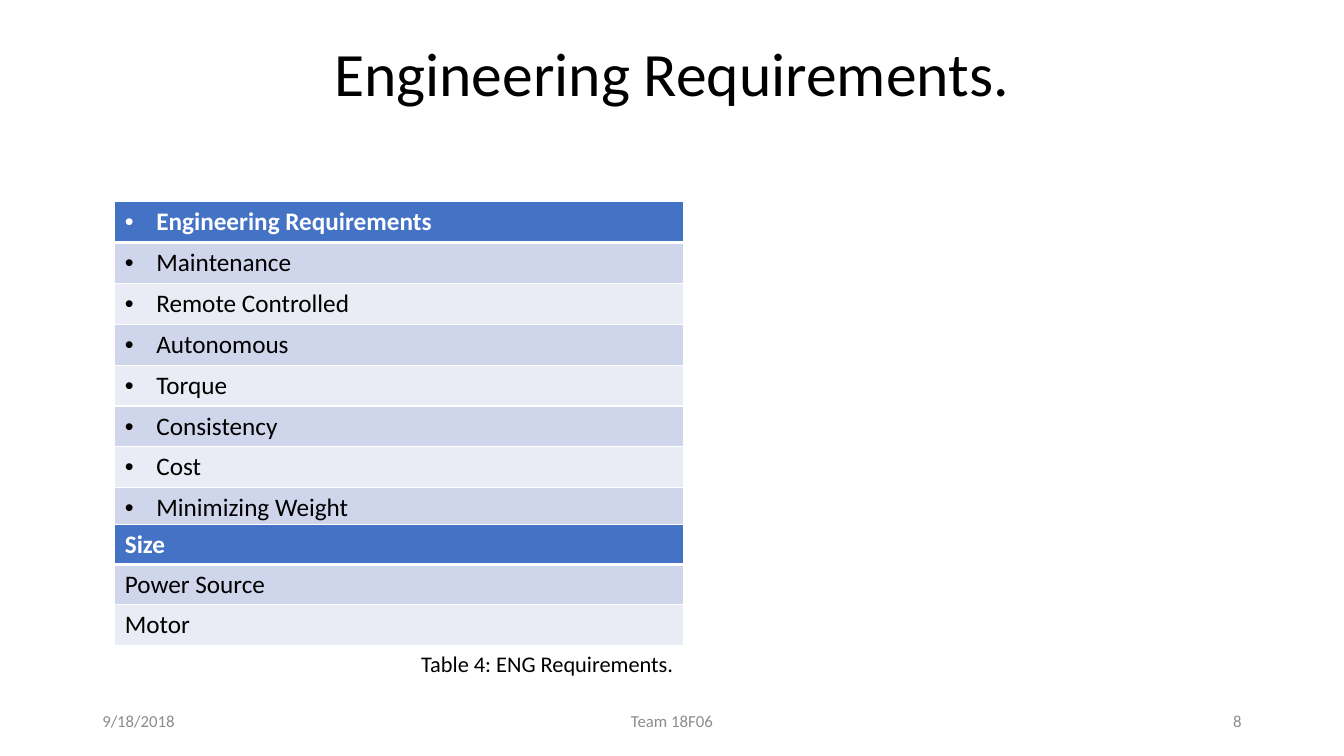
from lxml import etree
from pptx import Presentation
from pptx.dml.color import RGBColor
from pptx.enum.text import MSO_ANCHOR, MSO_AUTO_SIZE, PP_ALIGN
from pptx.oxml.ns import qn
from pptx.util import Pt

LEFT, CENTER, RIGHT = PP_ALIGN.LEFT, PP_ALIGN.CENTER, PP_ALIGN.RIGHT
TOP, MIDDLE = MSO_ANCHOR.TOP, MSO_ANCHOR.MIDDLE
FIXED = MSO_AUTO_SIZE.NONE
FONT = "Calibri"
COLORS = {
    "text": "000000",
    "white": "FFFFFF",
    "header": "4472C4",
    "band": "CFD5EA",
    "light": "E9EBF5",
    "footer": "8C8C8C",
}
REQUIREMENTS = [
    "Engineering Requirements", "Maintenance", "Remote Controlled", "Autonomous",
    "Torque", "Consistency", "Cost", "Minimizing Weight",
]
MORE_REQUIREMENTS = ["Size", "Power Source", "Motor"]


class RequirementsSlide:
    """Adds styled titles, text and single-column tables to one slide."""

    def __init__(self, slide):
        self.slide = slide

    def add_wording(self, paragraph, wording, size, color="text", bold=False, align=LEFT):
        paragraph.alignment = align
        run = paragraph.add_run()
        run.text = wording
        run.font.name = FONT
        run.font.size = Pt(size)
        run.font.bold = bold
        run.font.color.rgb = RGBColor.from_string(COLORS[color])

    def title(self, wording, left, top, width, height):
        heading = self.slide.shapes.title
        heading.left, heading.top = Pt(left), Pt(top)
        heading.width, heading.height = Pt(width), Pt(height)
        frame = heading.text_frame
        frame.word_wrap = True
        frame.auto_size = FIXED
        frame.vertical_anchor = MIDDLE
        paragraph = frame.paragraphs[0]
        paragraph.line_spacing = 0.9
        self.add_wording(paragraph, wording, 44, align=CENTER)
        paragraph.add_line_break()

    def text(self, wording, left, top, width, height, size, color, align, anchor):
        frame = self.slide.shapes.add_textbox(
            Pt(left), Pt(top), Pt(width), Pt(height)).text_frame
        frame.word_wrap = True
        frame.vertical_anchor = anchor
        self.add_wording(frame.paragraphs[0], wording, size, color, align=align)

    def bullet(self, paragraph, indent):
        properties = paragraph._p.get_or_add_pPr()
        properties.set("marL", str(Pt(indent)))
        properties.set("indent", str(-Pt(indent)))
        etree.SubElement(properties, qn("a:buFont"), typeface="Arial")
        etree.SubElement(properties, qn("a:buChar"), char="•")

    def borders(self, cell, top, bottom):
        properties = cell._tc.get_or_add_tcPr()
        widths = {"a:lnL": 1, "a:lnR": 1, "a:lnT": top, "a:lnB": bottom}
        for position, (side, width) in enumerate(widths.items()):
            line = etree.Element(qn(side), w=str(Pt(width)))
            fill = etree.SubElement(line, qn("a:solidFill"))
            etree.SubElement(fill, qn("a:srgbClr"), val=COLORS["white"])
            properties.insert(position, line)

    def table(self, entries, left, top, width, height, bulleted=False):
        grid = self.slide.shapes.add_table(
            len(entries), 1, Pt(left), Pt(top), Pt(width), Pt(height)).table
        for row, entry in enumerate(entries):
            header = row == 0
            cell = grid.cell(row, 0)
            shade = "header" if header else "band" if row % 2 else "light"
            cell.fill.solid()
            cell.fill.fore_color.rgb = RGBColor.from_string(COLORS[shade])
            self.borders(cell, 3 if row == 1 else 1, 3 if header else 1)
            paragraph = cell.text_frame.paragraphs[0]
            self.add_wording(paragraph, entry, 18, "white" if header else "text", header)
            if bulleted:
                self.bullet(paragraph, 22.5)


def main():
    deck = Presentation()
    deck.slide_width, deck.slide_height = Pt(960), Pt(540)
    page = RequirementsSlide(deck.slides.add_slide(deck.slide_layouts[5]))
    page.title("Engineering Requirements.", 66, 28.75, 828, 104.4)
    page.table(REQUIREMENTS, 82, 144, 406, 230.4, bulleted=True)
    footers = [
        ("9/18/2018", 66, 216, LEFT),
        ("8", 678, 216, RIGHT),
        ("Team 18F06", 318, 324, CENTER),
    ]
    for wording, left, width, align in footers:
        page.text(wording, left, 500.5, width, 28.75, 12, "footer", align, MIDDLE)
    page.table(MORE_REQUIREMENTS, 82, 374.4, 406, 86.4)
    page.text("Table 4: ENG Requirements.", 252.5, 461, 235.5, 26.6,
              16, "text", RIGHT, TOP)
    deck.save("out.pptx")


if __name__ == "__main__":
    main()
